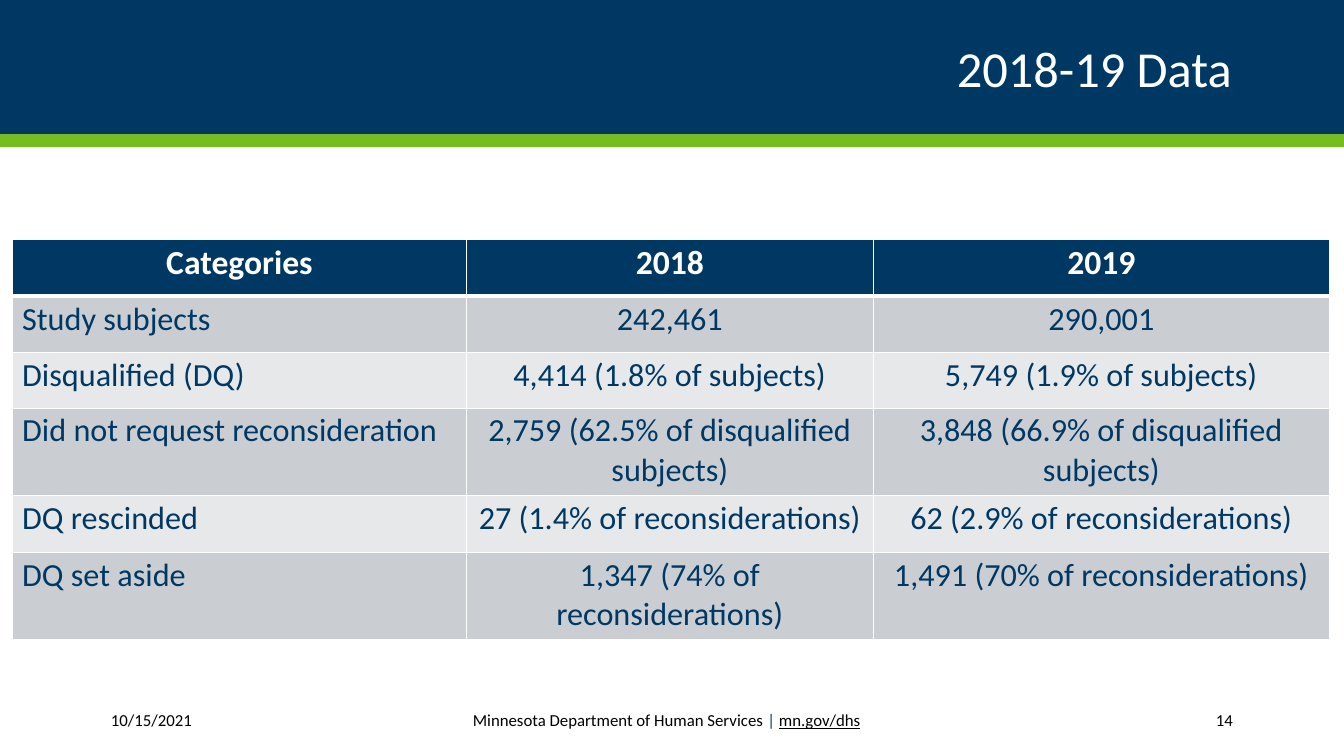
import pptx
import pptx.dml.color
import pptx.enum.shapes
import pptx.enum.text
import pptx.oxml
import pptx.oxml.ns
import pptx.util

Inches, Pt = pptx.util.Inches, pptx.util.Pt
ALIGN = pptx.enum.text.PP_ALIGN
ANCHOR = pptx.enum.text.MSO_ANCHOR

NAVY, GREEN, WHITE, BLACK = "003864", "78BD20", "FFFFFF", "000000"
BANDS = ("CACED2", "E7E8EA")
FONT = "Calibri"

TITLE = "2018-19 Data"
TABLE = [
    ("Categories", "2018", "2019"),
    ("Study subjects", "242,461", "290,001"),
    ("Disqualified (DQ)", "4,414 (1.8% of subjects)", "5,749 (1.9% of subjects)"),
    ("Did not request reconsideration",
     "2,759 (62.5% of disqualified subjects)",
     "3,848 (66.9% of disqualified subjects)"),
    ("DQ rescinded", "27 (1.4% of reconsiderations)", "62 (2.9% of reconsiderations)"),
    ("DQ set aside", "1,347 (74% of\nreconsiderations)", "1,491 (70% of reconsiderations)"),
]
COLUMN_WIDTHS = (4.51, 4.03, 4.53)
ROW_HEIGHTS = (0.56, 0.56, 0.55, 0.87, 0.56, 0.87)

# left, width, runs of (text, colour, underlined)
FOOTERS = [
    (1.1, 0.84, [("10/15/2021", BLACK, False)]),
    (4.69, 3.97, [("Minnesota Department of Human Services ", BLACK, False),
                  ("| ", NAVY, False), ("mn.gov/dhs", BLACK, True)]),
    (12.06, 0.27, [("14", BLACK, False)]),
]


def rgb(value):
    return pptx.dml.color.RGBColor.from_string(value)


def fill(target, color):
    target.fill.solid()
    target.fill.fore_color.rgb = rgb(color)


def style(font, size, color, bold=False):
    font.name, font.size, font.bold = FONT, Pt(size), bold
    font.color.rgb = rgb(color)


def set_margins(frame, left=0, top=0, right=0, bottom=0):
    frame.margin_left, frame.margin_top = Inches(left), Inches(top)
    frame.margin_right, frame.margin_bottom = Inches(right), Inches(bottom)


def set_borders(cell, **widths):
    """Draw white cell borders; widths in points are keyed by side L, R, T, B."""
    properties = cell._tc.get_or_add_tcPr()
    for index, (side, width) in enumerate(widths.items()):
        properties.insert(index, pptx.oxml.parse_xml(
            f'<a:ln{side} {pptx.oxml.ns.nsdecls("a")} w="{Pt(width)}"><a:solidFill>'
            f'<a:srgbClr val="{WHITE}"/></a:solidFill></a:ln{side}>'))


def add_title(slide):
    title = slide.shapes.title
    title.left, title.top = Inches(0), Inches(0)
    title.width, title.height = Inches(13.33), Inches(1.33)
    fill(title, NAVY)
    frame = title.text_frame
    frame.text = TITLE
    frame.vertical_anchor = ANCHOR.MIDDLE
    set_margins(frame, right=1.11)
    paragraph = frame.paragraphs[0]
    paragraph.alignment = ALIGN.RIGHT
    style(paragraph.font, 36, WHITE)

    stripe = slide.shapes.add_shape(
        pptx.enum.shapes.MSO_SHAPE.RECTANGLE,
        Inches(0), Inches(1.33), Inches(13.33), Inches(0.13))
    stripe.shadow.inherit = False
    fill(stripe, GREEN)
    stripe.line.fill.background()


def add_data_table(slide):
    table = slide.shapes.add_table(
        len(TABLE), len(COLUMN_WIDTHS), Inches(0.12), Inches(2.38),
        Inches(sum(COLUMN_WIDTHS)), Inches(sum(ROW_HEIGHTS))).table
    for column, width in zip(table.columns, COLUMN_WIDTHS):
        column.width = Inches(width)
    for row, height in zip(table.rows, ROW_HEIGHTS):
        row.height = Inches(height)

    for row_index, values in enumerate(TABLE):
        header = row_index == 0
        for column_index, value in enumerate(values):
            label = column_index == 0 and not header
            cell = table.cell(row_index, column_index)
            cell.text = value
            cell.vertical_anchor = ANCHOR.TOP
            set_margins(cell, left=0.1 if label else 0, top=0.03)
            fill(cell, NAVY if header else BANDS[(row_index - 1) % 2])
            set_borders(cell, L=1, R=1, T=3 if row_index == 1 else 1, B=3 if header else 1)
            paragraphs = cell.text_frame.paragraphs
            paragraphs[0].space_before = Pt(2)
            for paragraph in paragraphs:
                paragraph.alignment = ALIGN.LEFT if label else ALIGN.CENTER
                style(paragraph.font, 24 if header else 23, WHITE if header else NAVY, header)


def add_footers(slide):
    for left, width, runs in FOOTERS:
        box = slide.shapes.add_textbox(Inches(left), Inches(7.07), Inches(width), Inches(0.19))
        frame = box.text_frame
        frame.word_wrap = True
        set_margins(frame)
        paragraph = frame.paragraphs[0]
        paragraph.line_spacing = Pt(12.4)
        for text, color, underlined in runs:
            run = paragraph.add_run()
            run.text = text
            style(run.font, 12, color)
            run.font.underline = underlined


def main():
    presentation = pptx.Presentation()
    presentation.slide_width, presentation.slide_height = Inches(13.33), Inches(7.5)
    slide = presentation.slides.add_slide(presentation.slide_layouts[5])
    add_title(slide)
    add_data_table(slide)
    add_footers(slide)
    presentation.save("out.pptx")


if __name__ == "__main__":
    main()
